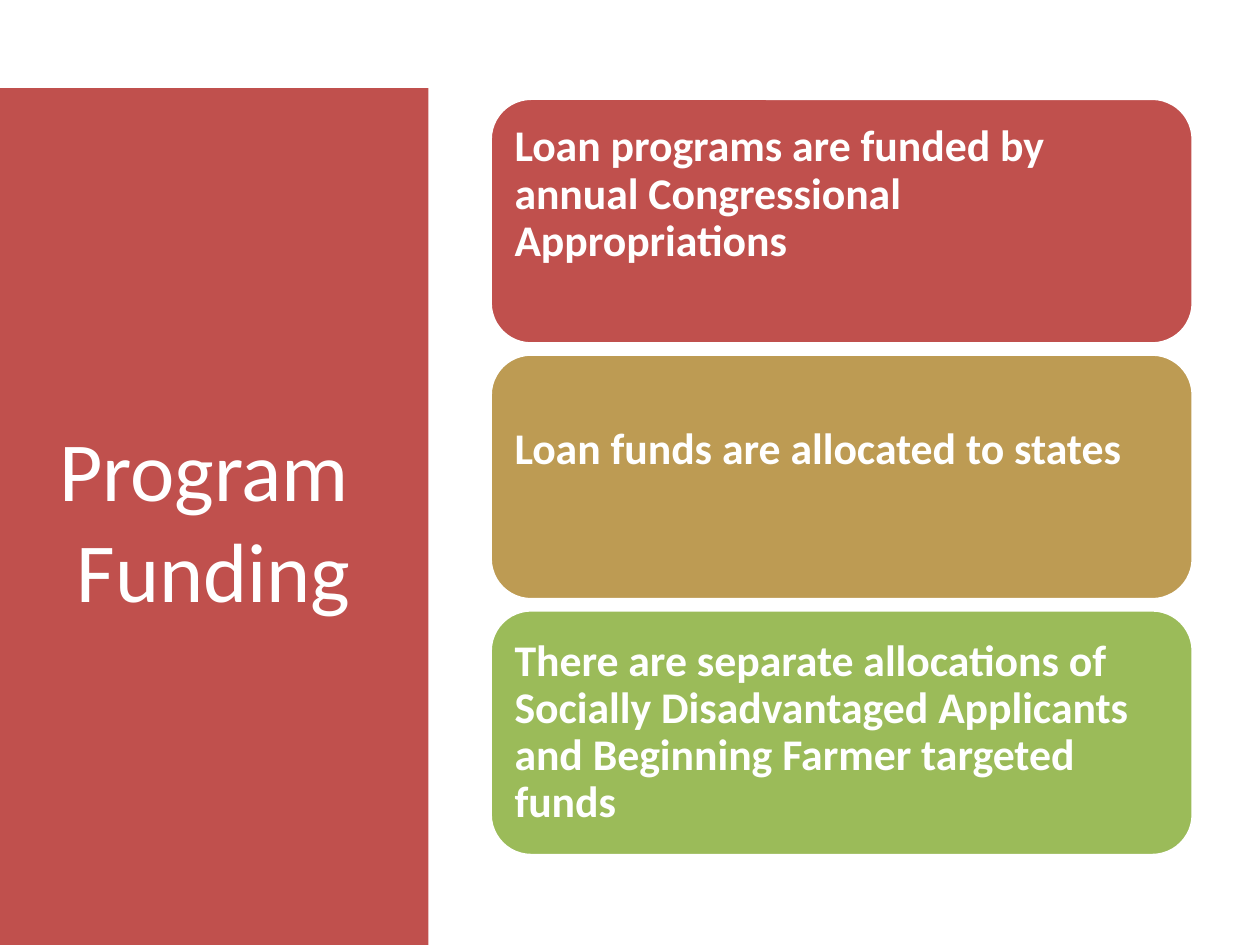
"""Build the Program Funding slide."""
from pptx import Presentation
from pptx import util as u
from pptx.dml.color import RGBColor
from pptx.enum import shapes, text

COLORS = {"red": "C0504D", "gold": "BD9B53", "green": "9BBB59", "white": "FFFFFF"}
CARDS = [
    ("Loan programs are funded by annual Congressional Appropriations", "red", True),
    ("Loan funds are allocated to states", "gold", True),
    ("There are separate allocations of Socially Disadvantaged Applicants "
     "and Beginning Farmer targeted funds", "green", False),
]
CARD_TOP, CARD_HEIGHT, CARD_PITCH = 0.78, 1.95, 2.03


class FundingSlide:
    """Hold the text style and the slide being drawn."""

    font = "Calibri"

    def __init__(self, slide):
        self.slide = slide

    def color(self, name):
        return RGBColor.from_string(COLORS[name])

    def block(self, preset, left, top, width, height, fill):
        block = self.slide.shapes.add_shape(
            preset, u.Inches(left), u.Inches(top), u.Inches(width), u.Inches(height))
        block.shadow.inherit = False
        block.fill.solid()
        block.fill.fore_color.rgb = self.color(fill)
        block.line.fill.background()
        block.text_frame.word_wrap = True
        block.text_frame.vertical_anchor = text.MSO_ANCHOR.MIDDLE
        return block

    def add_words(self, paragraph, words, size, bold, align):
        paragraph.alignment = align
        run = paragraph.add_run()
        run.text = words
        run.font.name = self.font
        run.font.size = u.Pt(size)
        run.font.bold = bold
        run.font.color.rgb = self.color("white")

    def title_panel(self, lines):
        panel = self.block(shapes.MSO_SHAPE.RECTANGLE, -0.01, 0.7, 3.41, 6.83, "red")
        frame = panel.text_frame
        for index, line in enumerate(lines):
            paragraph = frame.add_paragraph() if index else frame.paragraphs[0]
            self.add_words(paragraph, line, 48, False, text.PP_ALIGN.CENTER)

    def card(self, top, words, fill, trailing_break):
        card = self.block(
            shapes.MSO_SHAPE.ROUNDED_RECTANGLE, 3.89, top, 5.58, CARD_HEIGHT, fill)
        card.line.color.rgb = self.color("white")
        card.line.width = u.Pt(2)
        frame = card.text_frame
        frame.margin_left = frame.margin_right = u.Inches(0.1)
        frame.margin_top = frame.margin_bottom = u.Inches(0.1)
        statement = frame.paragraphs[0]
        statement.line_spacing = 0.9
        self.add_words(statement, words, 25, True, text.PP_ALIGN.LEFT)
        if trailing_break:
            statement.add_line_break()
            statement._p.get_or_add_endParaRPr().set("sz", "2500")


def main():
    deck = Presentation()
    deck.slide_width, deck.slide_height = u.Inches(10), u.Inches(7.5)
    funding = FundingSlide(deck.slides.add_slide(deck.slide_layouts[6]))
    for index, (words, fill, trailing_break) in enumerate(CARDS):
        funding.card(CARD_TOP + index * CARD_PITCH, words, fill, trailing_break)
    funding.title_panel(["Program ", "Funding"])
    deck.save("out.pptx")


if __name__ == "__main__":
    main()
